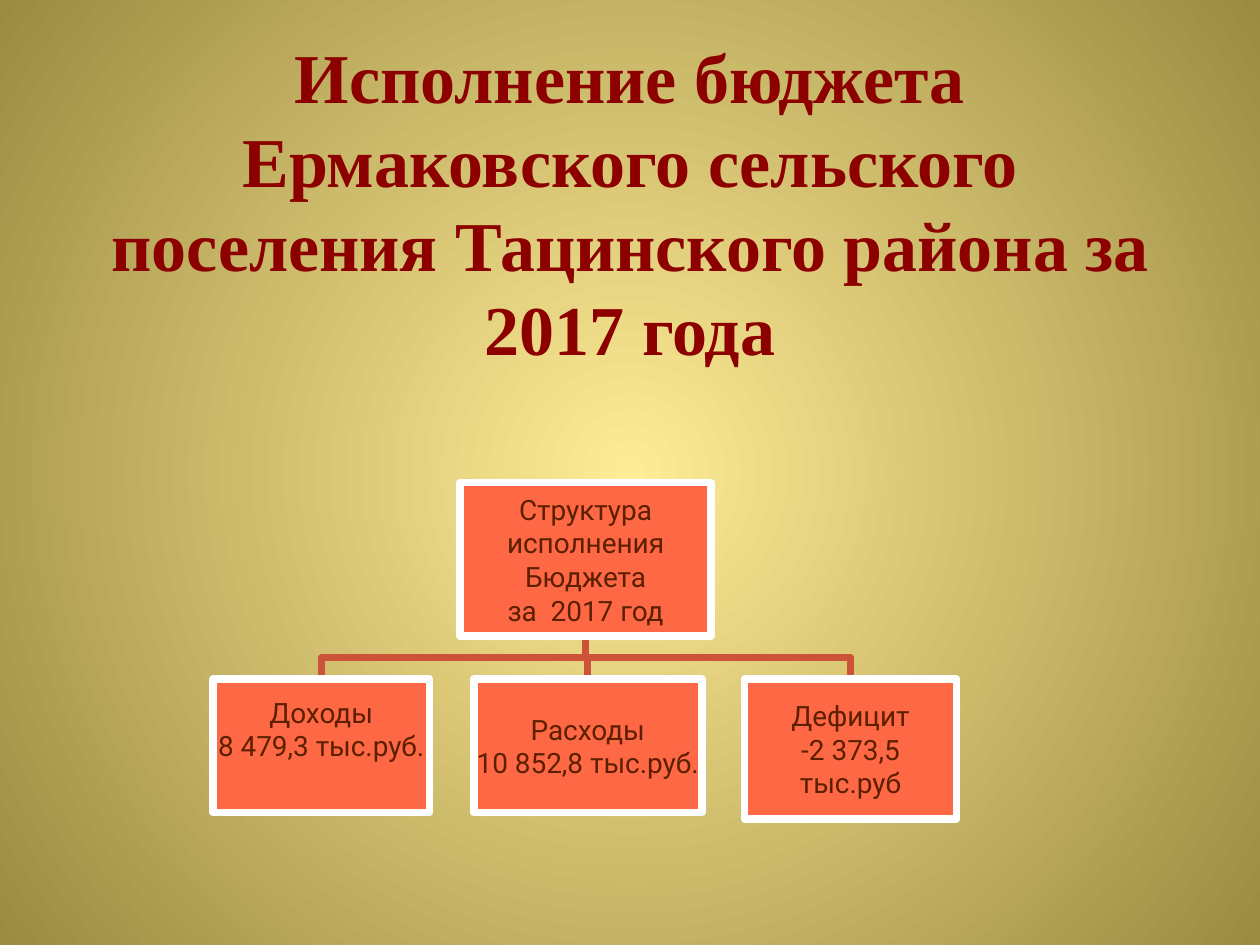
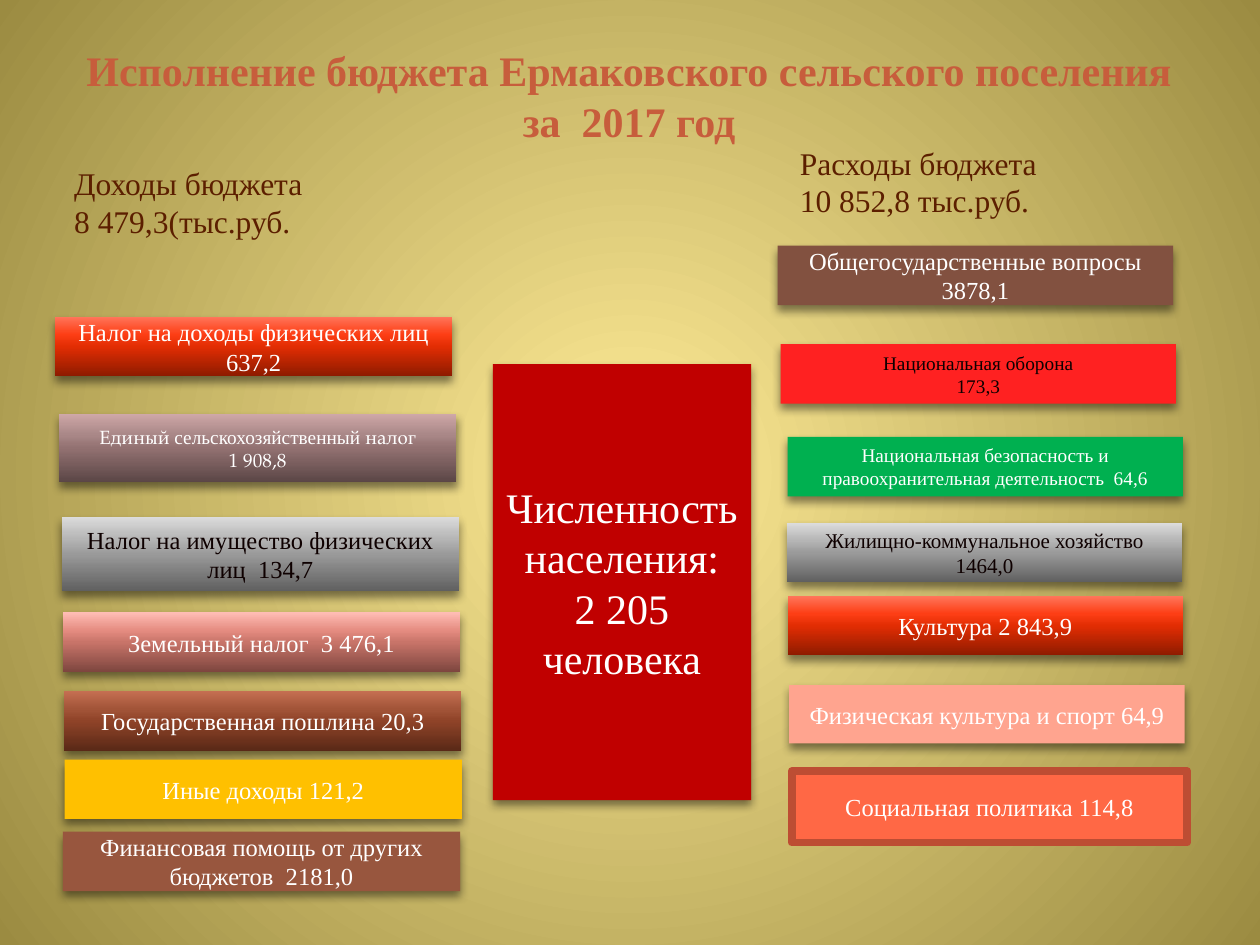
from copy import deepcopy

from lxml.etree import SubElement
from pptx import Presentation
from pptx.dml.color import RGBColor
from pptx.enum.shapes import MSO_SHAPE as Preset
from pptx.enum.text import MSO_ANCHOR as Anchor, MSO_AUTO_SIZE as AutoSize, PP_ALIGN as Align
from pptx.oxml.ns import qn
from pptx.util import Pt

THEME = {
    "serif": "Times New Roman", "book": "TeX Gyre Pagella", "sans": "Roboto",
    "backdrop": [(0, "FFEC97"), (100, "9B8B41")],
    "brown": "5C1F00", "white": "FFFFFF", "ink": "0E0000",
    "cover title": "8C0000", "title": "C75D3C",
    "coral": "FF6845", "branch": "CC5337", "coral edge": "BD4D33",
    "red": [(0, "8E1B00"), (50, "E22D03"), (70, "FD3E15"), (100, "FF755A")],
    "mauve": [(0, "5B4646"), (50, "927171"), (70, "AA8888"), (100, "CFA8A8")],
    "grey": [(0, "606060"), (50, "9A9A9A"), (70, "B5B5B5"), (100, "DCDCDC")],
    "rose": [(0, "7E463F"), (50, "C87469"), (70, "E58C81"), (100, "FFBDB5")],
    "rust": [(0, "5A2917"), (50, "8F4328"), (70, "A25438"), (100, "C56F52")],
    "clay": "98563E", "amber": "FFC000", "cocoa": "825140", "scarlet": "FF2121",
    "green": "00B050", "salmon": "FFA48F", "crimson": "C00000",
    "cover size": 40, "title size": 24, "heading size": 18, "node size": 16,
    "card size": 14, "medium size": 12, "small size": 11, "edge": 4.33,
}


def paint(fill, colour):
    """Fill with one colour, or with a bottom-to-top gradient given as (percent, colour) stops."""
    if isinstance(colour, str):
        fill.solid()
        fill.fore_color.rgb = RGBColor.from_string(colour)
        return
    fill.gradient()
    first = fill.gradient_stops[0]._gs
    for _ in colour[2:]:
        first.addnext(deepcopy(first))
    for stop, (percent, shade) in zip(fill.gradient_stops, colour):
        stop.position = percent / 100
        stop.color.rgb = RGBColor.from_string(shade)
    fill.gradient_angle = 90


def write(shape, text, size, colour, fonts=("serif",), align=Align.CENTER,
          bold=False, **frame_format):
    """Write one paragraph a line; pieces divided by | take the fonts in turn."""
    frame = shape.text_frame
    frame_format = {"word_wrap": True, "auto_size": AutoSize.NONE,
                    "vertical_anchor": Anchor.MIDDLE} | frame_format
    for name, value in frame_format.items():
        setattr(frame, name, value)
    for number, line in enumerate(text.split("\n")):
        paragraph = frame.add_paragraph() if number else frame.paragraphs[0]
        paragraph.alignment = align
        for turn, piece in enumerate(line.split("|")):
            run = paragraph.add_run()
            run.text = piece
            run_format = {"name": THEME[fonts[turn % len(fonts)]],
                          "size": Pt(THEME[size]), "bold": bold}
            for name, value in run_format.items():
                setattr(run.font, name, value)
            run.font.color.rgb = RGBColor.from_string(THEME[colour])


deck = Presentation()
deck.slide_width, deck.slide_height = Pt(720), Pt(540)

# Radial backdrop shared by both slides
backdrop = deck.slide_master.background.fill
paint(backdrop, THEME["backdrop"])
gradient = backdrop.gradient_stops[0]._gs.getparent().getparent()
gradient.remove(gradient.find(qn("a:lin")))
radial = SubElement(gradient, qn("a:path"), {"path": "circle"})
SubElement(radial, qn("a:fillToRect"), dict.fromkeys("ltrb", "50000"))

# Titles
titles = [
    ("Исполнение бюджета Ермаковского сельского поселения Тацинского района за 2017 года",
     "cover size", "cover title", (36, 19, 648, 192)),
    ("Исполнение бюджета Ермаковского сельского поселения за  2017 год",
     "title size", "title", (39, 21.6, 641, 65.5)),
]
slides = []
for text, size, colour, place in titles:
    slide = deck.slides.add_slide(deck.slide_layouts[5])
    title = slide.shapes.title
    title.left, title.top, title.width, title.height = map(Pt, place)
    write(title, text, size, colour, bold=True)
    slides.append(slide)
overview, details = slides

# Slide 1: the budget and its three parts
root_x, root_bottom, part_top = 334.6, 363.6, 388.1
middle = (root_bottom + part_top) / 2
nodes = [
    ("Структура\nисполнения\nБюджета\nза  2017 год", 263, 275.8, 143.3, 87.8, 0.72),
    ("Доходы\n8 479,3 тыс.руб.", 121.7, part_top, 123.8, 76.3, 20),
    ("Расходы\n10 852,8 тыс.руб.", 270.7, part_top, 130.3, 76.3, 0.72),
    ("Дефицит\n-2 373,5\nтыс.руб", 425.5, part_top, 121, 79.9, 0.72),
]
for _, left, _, width, *_ in nodes[1:]:
    part_x = left + width / 2
    pen = overview.shapes.build_freeform(Pt(root_x), Pt(root_bottom), scale=1.0)
    pen.add_line_segments([(Pt(x), Pt(y)) for x, y in (
        (root_x, middle), (part_x, middle), (part_x, part_top))], close=False)
    branch = pen.convert_to_shape()
    branch.shadow.inherit = False
    branch.fill.background()
    paint(branch.line.fill, THEME["branch"])
    branch.line.width = Pt(THEME["edge"])

for text, left, top, width, height, bottom_margin in nodes:
    node = overview.shapes.add_shape(Preset.RECTANGLE, *map(Pt, (left, top, width, height)))
    node.shadow.inherit = False
    paint(node.fill, THEME["coral"])
    paint(node.line.fill, THEME["white"])
    node.line.width = Pt(THEME["edge"])
    write(node, text, "node size", "brown", ("sans",), margin_left=Pt(0.72),
          margin_right=Pt(0.72), margin_top=Pt(0.72), margin_bottom=Pt(bottom_margin))

# Slide 2: headings of the two columns
headings = [
    ("Доходы бюджета\n8 479,3(тыс.руб.", 35.3, 90, 156, 51),
    ("Расходы бюджета\n10 852,8 тыс.руб.", 450, 78.5, 222, 68),
]
for text, *place in headings:
    heading = details.shapes.add_textbox(*map(Pt, place))
    write(heading, text, "heading size", "brown", align=Align.LEFT, vertical_anchor=Anchor.TOP)

# Slide 2: income on the left, spending on the right, population between
card = ("card size", "white")
small = ("small size", "white")
income = [
    ("Налог на доходы физических лиц 637,2", "red", card, 31.5, 181, 34),
    ("Единый |сельскохозяйственный| налог\n1 908,8", "mauve", small, 33.8, 236.4, 39.2),
    ("Налог на имущество физических лиц  134,7", "grey", ("card size", "ink"), 35.3, 295.3, 42.5),
    ("Земельный налог  3 476,1", "rose", card, 36, 350, 34),
    ("Государственная пошлина 20,3", "rust", card, 36.7, 395, 34),
    ("Иные доходы 121,2", "amber", card, 37, 434, 34),
    ("Финансовая помощь от других бюджетов  2181,0", "clay", card, 36, 475.2, 34),
]
spending = [
    ("Общегосударственные вопросы\n3878,1", "cocoa", card, 444.4, 140.4, 34),
    ("Национальная оборона\n173,3", "scarlet", ("small size", "ink"), 446, 196.7, 34),
    ("Национальная безопасность и правоохранительная деятельность  64,6", "green", small,
     450, 249.7, 34),
    ("Жилищно-коммунальное хозяйство\n1464,0", "grey", ("medium size", "ink"), 449.6, 298.8, 34),
    ("Культура 2 843,9", "red", card, 450, 340.6, 34),
    ("Физическая культура и спорт 64,9", "salmon", card, 451, 391.5, 33.3),
    ("Социальная политика 114,8", "coral", card, 452.4, 440.6, 41),
]
population = [("Численность населения:\n2 205\nчеловека", "crimson", ("title size", "white"),
               281.6, 208, 249.2)]

for group, width in ((income, 227), (spending, 226), (population, 147.6)):
    for text, colour, (size, ink), left, top, height in group:
        box = details.shapes.add_shape(Preset.RECTANGLE, *map(Pt, (left, top, width, height)))
        paint(box.fill, THEME[colour])
        box.shadow.inherit = False
        write(box, text, size, ink, ("book", "serif") if "|" in text else ("serif",))
        if colour == "coral":
            paint(box.line.fill, THEME["coral edge"])
            box.line.width = Pt(THEME["edge"])
            continue
        box.line.fill.background()
        effects = box._element.spPr.find(qn("a:effectLst"))
        shadow = SubElement(effects, qn("a:outerShdw"), {
            "blurRad": str(Pt(5)), "dist": str(Pt(3)), "dir": "5400000", "rotWithShape": "0"})
        black = SubElement(shadow, qn("a:srgbClr"), val="000000")
        SubElement(black, qn("a:alpha"), val="45000")

deck.save("out.pptx")
